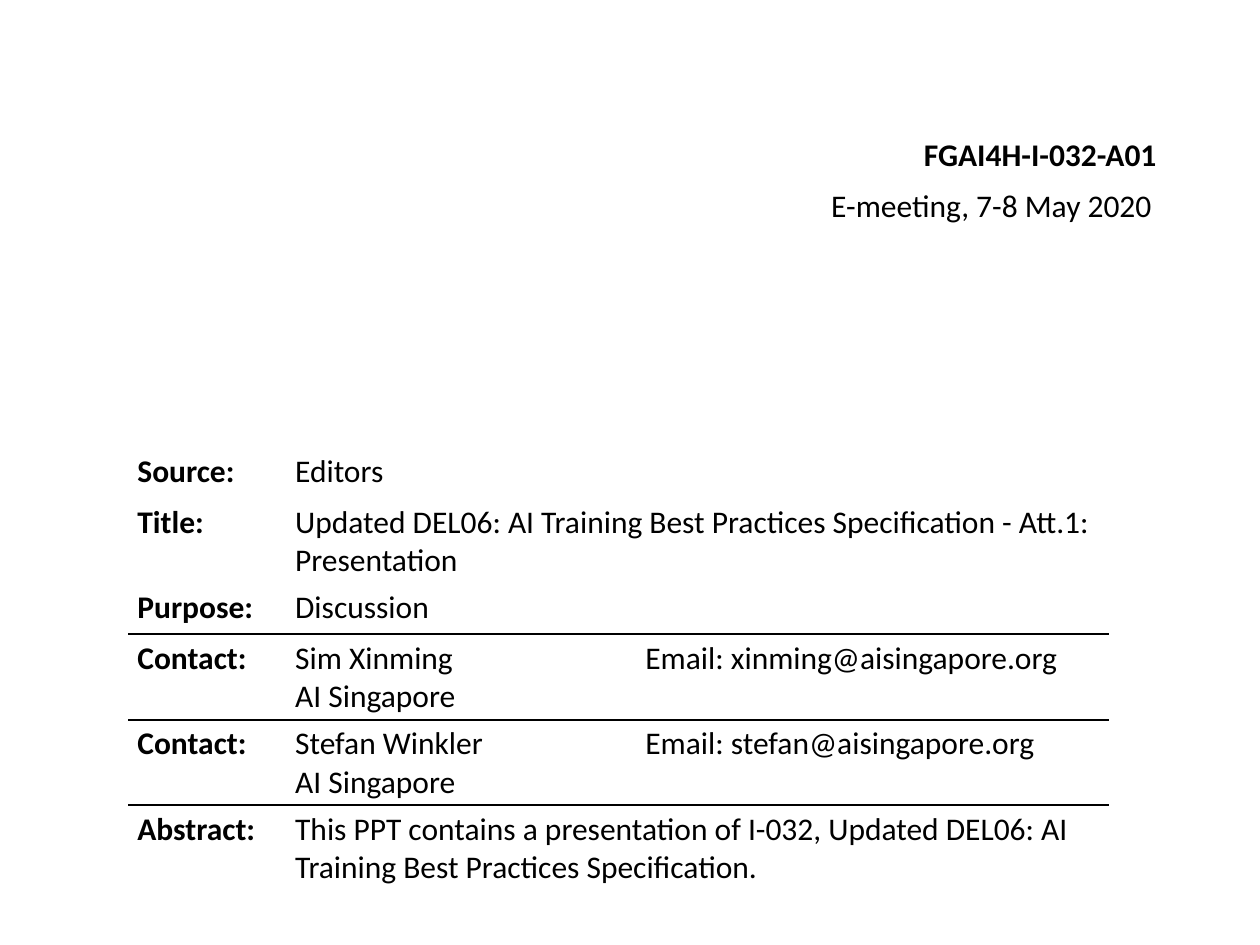
from dataclasses import dataclass

from lxml import etree
from pptx import Presentation
from pptx.dml.color import RGBColor
from pptx.enum import text
from pptx.oxml import ns
from pptx.util import Cm, Length, Pt


@dataclass(frozen=True)
class Theme:
    font: str = "Calibri"
    size: Length = Pt(18)
    ink: str = "000000"
    rule: Length = Pt(1.5)


@dataclass(frozen=True)
class Heading:
    words: str
    left: float
    top: float
    width: float
    bold: bool = False


@dataclass(frozen=True)
class Entry:
    """One table row; without an email the value spans both columns."""
    label: str
    value: str
    email: str = ""
    lines: int = 1
    rule_above: bool = False
    rule_below: bool = False


THEME = Theme()
HEADINGS = [
    Heading("FGAI4H-I-032-A01", 18.31, 2.59, 5.26, bold=True),
    Heading("E-meeting, 7-8 May 2020", 16.41, 3.63, 7.06),
]
ENTRIES = [
    Entry("Source:", "Editors"),
    Entry("Title:", "Updated DEL06: AI Training Best Practices Specification - Att.1: Presentation",
          lines=2),
    Entry("Purpose:", "Discussion", rule_below=True),
    Entry("Contact:", "Sim Xinming\vAI Singapore", "Email: xinming@aisingapore.org",
          lines=2, rule_above=True, rule_below=True),
    Entry("Contact:", "Stefan Winkler\vAI Singapore", "Email: stefan@aisingapore.org",
          lines=2, rule_above=True, rule_below=True),
    Entry("Abstract:", "This PPT contains a presentation of I-032, Updated DEL06: "
          "AI Training Best Practices Specification.", lines=2, rule_above=True),
]
COLUMN_WIDTHS = [Cm(3.18), Cm(7.06), Cm(9.52)]
ROW_HEIGHTS = {1: Cm(1.02), 2: Cm(1.71)}


def write(frame, words: str, *, bold: bool = False, align=text.PP_ALIGN.LEFT) -> None:
    paragraph = frame.paragraphs[0]
    paragraph.text = words
    paragraph.alignment = align
    for run in paragraph.runs:
        run.font.name = THEME.font
        run.font.size = THEME.size
        run.font.bold = bold
        run.font.color.rgb = RGBColor.from_string(THEME.ink)


def add_heading(slide, heading: Heading) -> None:
    box = slide.shapes.add_textbox(Cm(heading.left), Cm(heading.top), Cm(heading.width), Cm(1.02))
    frame = box.text_frame
    frame.word_wrap = False
    frame.auto_size = text.MSO_AUTO_SIZE.SHAPE_TO_FIT_TEXT
    write(frame, heading.words, bold=heading.bold, align=text.PP_ALIGN.RIGHT)


def set_borders(cell, above: bool, below: bool) -> None:
    properties = cell._tc.get_or_add_tcPr()
    for side, ruled in (("L", False), ("R", False), ("T", above), ("B", below)):
        line = etree.SubElement(properties, ns.qn(f"a:ln{side}"), w=str(int(THEME.rule)))
        if ruled:
            fill = etree.SubElement(line, ns.qn("a:solidFill"))
            etree.SubElement(fill, ns.qn("a:srgbClr"), val=THEME.ink)
        else:
            etree.SubElement(line, ns.qn("a:noFill"))


def add_entries(slide, entries: list[Entry]) -> None:
    heights = [ROW_HEIGHTS[entry.lines] for entry in entries]
    table = slide.shapes.add_table(len(entries), len(COLUMN_WIDTHS), Cm(2.59), Cm(9.02),
                                   sum(COLUMN_WIDTHS), sum(heights)).table
    table.first_row = table.horz_banding = False
    for column, width in zip(table.columns, COLUMN_WIDTHS):
        column.width = width
    for row, height, entry in zip(table.rows, heights, entries):
        row.height = height
        label, value, email = row.cells
        for cell in (label, value, email):
            cell.margin_left = cell.margin_right = Cm(0.18)
            cell.margin_top = cell.margin_bottom = Cm(0.1)
            set_borders(cell, entry.rule_above, entry.rule_below)
            cell.fill.background()
        write(label.text_frame, entry.label, bold=True)
        write(value.text_frame, entry.value)
        if entry.email:
            write(email.text_frame, entry.email)
        else:
            value.merge(email)


def main() -> None:
    deck = Presentation()
    deck.slide_width, deck.slide_height = Cm(25.4), Cm(19.05)
    slide = deck.slides.add_slide(deck.slide_layouts[6])
    for heading in HEADINGS:
        add_heading(slide, heading)
    add_entries(slide, ENTRIES)
    deck.save("out.pptx")


if __name__ == "__main__":
    main()
